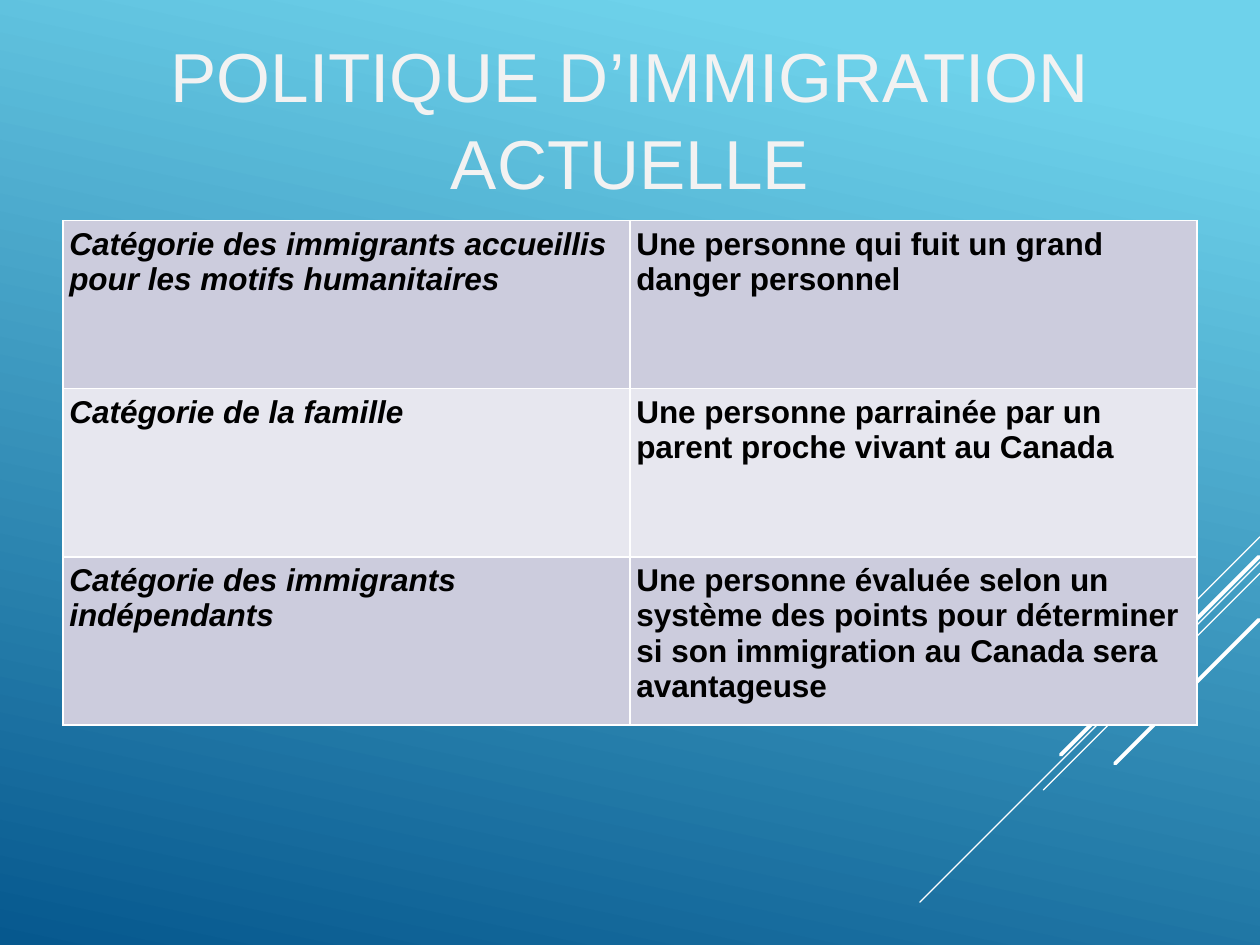
from dataclasses import dataclass

from lxml.etree import SubElement
from pptx import Presentation
from pptx.dml.color import RGBColor as RGB
from pptx.enum.shapes import MSO_CONNECTOR as Connector
from pptx.enum.text import MSO_ANCHOR as Anchor, PP_ALIGN as Align
from pptx.oxml.ns import qn
from pptx.util import Inches, Pt


@dataclass(frozen=True)
class Theme:
    font: str = "Arial"
    title_size: float = 39.6
    body_size: float = 18
    sky: RGB = RGB(0x6E, 0xD2, 0xEB)
    deep: RGB = RGB(0x06, 0x58, 0x8E)
    title: RGB = RGB(0xF2, 0xF2, 0xF2)
    body: RGB = RGB(0, 0, 0)
    white: RGB = RGB(0xFF, 0xFF, 0xFF)
    bands: tuple = (RGB(0xCC, 0xCC, 0xDD), RGB(0xE7, 0xE7, 0xEF))


THEME = Theme()
TITLE = "POLITIQUE D’IMMIGRATION ACTUELLE"
CATEGORIES = [
    ("Catégorie des immigrants accueillis pour les motifs humanitaires",
     "Une personne qui fuit un grand danger personnel"),
    ("Catégorie de la famille",
     "Une personne parrainée par un parent proche vivant au Canada"),
    ("Catégorie des immigrants indépendants",
     "Une personne évaluée selon un système des points pour déterminer "
     "si son immigration au Canada sera avantageuse"),
]
# Diagonal streaks: right end x, y, horizontal reach, width in points
STREAKS = [
    (10, 4.26, 0.83, 0.75),
    (10, 4.46, 2.7, 0.75),
    (10, 4.55, 1.72, 0.75),
    (9.99, 4.42, 1.57, 2.25),
    (9.99, 4.92, 1.14, 2.25),
]


def style_text(frame, size, color, bold=False, italic=False):
    for paragraph in frame.paragraphs:
        for run in paragraph.runs:
            font = run.font
            font.name, font.size = THEME.font, Pt(size)
            font.bold, font.italic = bold, italic
            font.color.rgb = color


def paint_background(slide):
    fill = slide.background.fill
    fill.gradient()
    fill.gradient_angle = 360 - 102
    stops = ((0.1, THEME.sky), (1, THEME.deep))
    for stop, (position, color) in zip(fill.gradient_stops, stops):
        stop.position = position
        stop.color.rgb = color


def add_streak(slide, x, y, reach, width):
    streak = slide.shapes.add_connector(
        Connector.STRAIGHT, Inches(x), Inches(y),
        Inches(x - reach), Inches(y + reach))
    streak.line.color.rgb = THEME.white
    streak.line.width = Pt(width)
    streak.line._get_or_add_ln().set("cap", "rnd")
    SubElement(streak._element.spPr, qn("a:effectLst"))


def add_title(slide):
    box = slide.shapes.add_textbox(Inches(0.5), Inches(0.3), Inches(9), Inches(1.25))
    frame = box.text_frame
    frame.word_wrap = True
    frame.vertical_anchor = Anchor.MIDDLE
    frame.margin_left = frame.margin_right = 0
    frame.margin_top = frame.margin_bottom = 0
    frame.text = TITLE
    frame.paragraphs[0].alignment = Align.CENTER
    frame.paragraphs[0].line_spacing = 1.05
    style_text(frame, THEME.title_size, THEME.title)


def add_borders(cell):
    properties = cell._tc.get_or_add_tcPr()
    for side in ("lnL", "lnR", "lnT", "lnB"):
        border = SubElement(properties, qn(f"a:{side}"), w=str(Pt(1)))
        fill = SubElement(border, qn("a:solidFill"))
        SubElement(fill, qn("a:srgbClr"), val=str(THEME.white))


def fill_cell(cell, text, band, italic):
    cell.text = text
    cell.margin_left = cell.margin_right = Inches(0.05)
    cell.margin_top = cell.margin_bottom = Inches(0.05)
    style_text(cell.text_frame, THEME.body_size, THEME.body, bold=True, italic=italic)
    # Borders come before the fill in the cell properties
    add_borders(cell)
    cell.fill.solid()
    cell.fill.fore_color.rgb = band


def add_categories(slide):
    row_height = Inches(1.335)
    table = slide.shapes.add_table(
        len(CATEGORIES), 2, Inches(0.5), Inches(1.75),
        Inches(9), row_height * len(CATEGORIES)).table
    table.first_row = False
    for i, entry in enumerate(CATEGORIES):
        table.rows[i].height = row_height
        for j, text in enumerate(entry):
            fill_cell(table.cell(i, j), text, THEME.bands[i % 2], italic=j == 0)


def main():
    deck = Presentation()
    deck.slide_width, deck.slide_height = Inches(10), Inches(7.5)
    slide = deck.slides.add_slide(deck.slide_layouts[6])

    # Backdrop
    paint_background(slide)
    for streak in STREAKS:
        add_streak(slide, *streak)

    # Content
    add_title(slide)
    add_categories(slide)
    deck.save("out.pptx")


if __name__ == "__main__":
    main()
